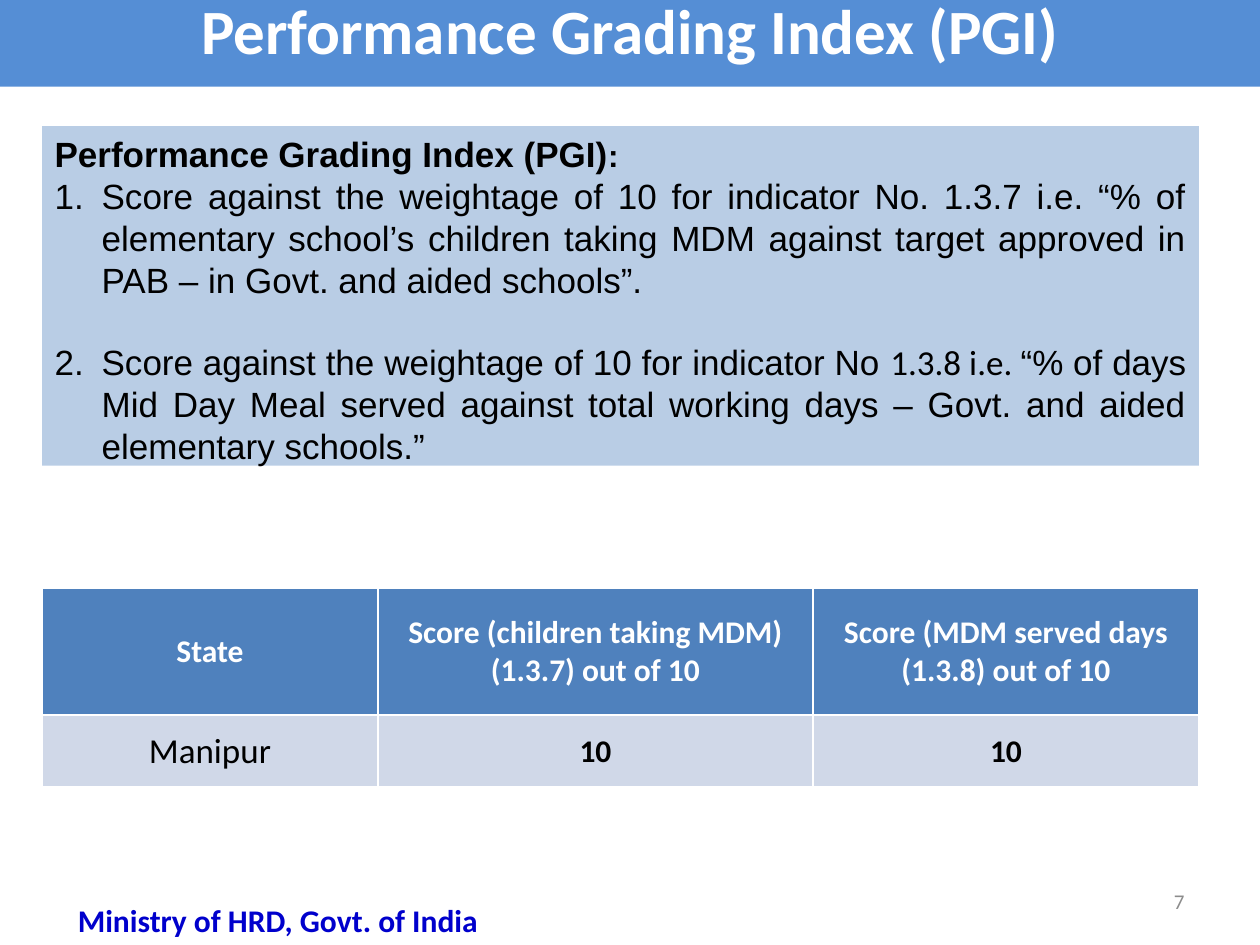
from lxml import etree
from pptx import Presentation
from pptx import util as u
from pptx.dml import color
from pptx.enum import text
from pptx.oxml import ns

ALIGN = text.PP_ALIGN
PX = u.Inches(1) / 126


def px(length):
    return u.Emu(round(length * PX))


def rgb(value):
    return color.RGBColor.from_string(value)


def place(shape, box):
    shape.left, shape.top, shape.width, shape.height = map(px, box)


def fill(item, value):
    item.fill.solid()
    item.fill.fore_color.rgb = rgb(value)


def style(font, size, value, bold=False, name="Calibri"):
    font.name = name
    font.size = u.Pt(size)
    font.bold = bold
    font.color.rgb = rgb(value)


def write_line(paragraph, line, align, size, value, bold=False):
    paragraph.text = line
    paragraph.alignment = align
    style(paragraph.font, size, value, bold)


def number_paragraph(paragraph, indent):
    properties = paragraph._p.get_or_add_pPr()
    properties.set("marL", str(indent))
    properties.set("indent", str(-indent))
    etree.SubElement(properties, ns.qn("a:buFont"), typeface="+mj-lt")
    etree.SubElement(properties, ns.qn("a:buAutoNum"), type="arabicPeriod")


def remove_bullet(paragraph):
    properties = paragraph._p.get_or_add_pPr()
    properties.set("marL", "0")
    properties.set("indent", "0")
    etree.SubElement(properties, ns.qn("a:buNone"))


def add_title(slide, box):
    title = slide.shapes.title
    place(title, box)
    fill(title, "558ED5")
    frame = title.text_frame
    frame.auto_size = text.MSO_AUTO_SIZE.SHAPE_TO_FIT_TEXT
    paragraph = frame.paragraphs[0]
    paragraph.line_spacing = 0.9
    write_line(paragraph, "Performance Grading Index (PGI)", ALIGN.CENTER, 36, "FFFFFF", True)


def add_indicators(slide, box):
    body = slide.placeholders[1]
    place(body, box)
    fill(body, "B9CDE5")
    frame = body.text_frame
    frame.auto_size = text.MSO_AUTO_SIZE.SHAPE_TO_FIT_TEXT
    paragraphs = [
        [("Performance Grading Index (PGI)", 20, "Arial"), (":", 18, "Arial")],
        [("Score against the weightage of 10 for indicator No. 1.3.7 i.e. “% of elementary "
          "school’s children taking MDM against target approved in PAB – in Govt. and aided "
          "schools”.", 20, "Arial")],
        [("Score against the weightage of 10 for indicator No ", 20, "Arial"),
         ("1.3.8 i.e. ", 20, "Calibri"),
         ("“% of days Mid Day Meal served against total working days – Govt. and aided "
          "elementary schools.”", 20, "Arial")],
    ]
    for index, runs in enumerate(paragraphs):
        paragraph = frame.paragraphs[0] if index == 0 else frame.add_paragraph()
        paragraph.alignment = ALIGN.JUSTIFY
        paragraph.space_before = u.Pt(23 if index == 2 else 0)
        if index:
            number_paragraph(paragraph, px(47))
        else:
            remove_bullet(paragraph)
        for words, size, name in runs:
            run = paragraph.add_run()
            run.text = words
            style(run.font, size, "000000", index == 0, name)


def add_scores(slide, box):
    rows = [
        ["State", "Score (children taking MDM)\n(1.3.7) out of 10",
         "Score (MDM served days\n(1.3.8) out of 10"],
        ["Manipur", "10", "10"],
    ]
    table = slide.shapes.add_table(2, 3, *map(px, box)).table
    for column, width in zip(table.columns, (336, 435, 386)):
        column.width = px(width)
    for row, height in zip(table.rows, (127, 72)):
        row.height = px(height)
    for r, values in enumerate(rows):
        for c, value in enumerate(values):
            cell = table.cell(r, c)
            fill(cell, "D0D8E8" if r else "4F81BD")
            cell.vertical_anchor = text.MSO_ANCHOR.MIDDLE
            cell.margin_left = cell.margin_right = cell.margin_top = px(1)
            cell.margin_bottom = 0
            cell.text = value
            is_state = r == 1 and c == 0
            for paragraph in cell.text_frame.paragraphs:
                write_line(paragraph, paragraph.text, ALIGN.CENTER, 20 if is_state else 18,
                           "000000" if r else "FFFFFF", not is_state)


def add_label(slide, box, line, align, size, value, bold=False):
    label = slide.shapes.add_textbox(*map(px, box))
    frame = label.text_frame
    frame.word_wrap = True
    frame.vertical_anchor = text.MSO_ANCHOR.MIDDLE
    write_line(frame.paragraphs[0], line, align, size, value, bold)


def main():
    presentation = Presentation()
    presentation.slide_width = px(1260)
    presentation.slide_height = px(945)
    slide = presentation.slides.add_slide(presentation.slide_layouts[1])
    add_title(slide, (0, -7, 1260, 82))
    add_indicators(slide, (42, 126, 1157, 352))
    add_scores(slide, (42, 588, 1157, 199))
    add_label(slide, (903, 876, 294, 50), "7", ALIGN.RIGHT, 12, "8C8C8C")
    add_label(slide, (31, 895, 494, 50), "Ministry of HRD, Govt. of India",
              ALIGN.CENTER, 18, "0000CC", True)
    presentation.save("out.pptx")


if __name__ == "__main__":
    main()
